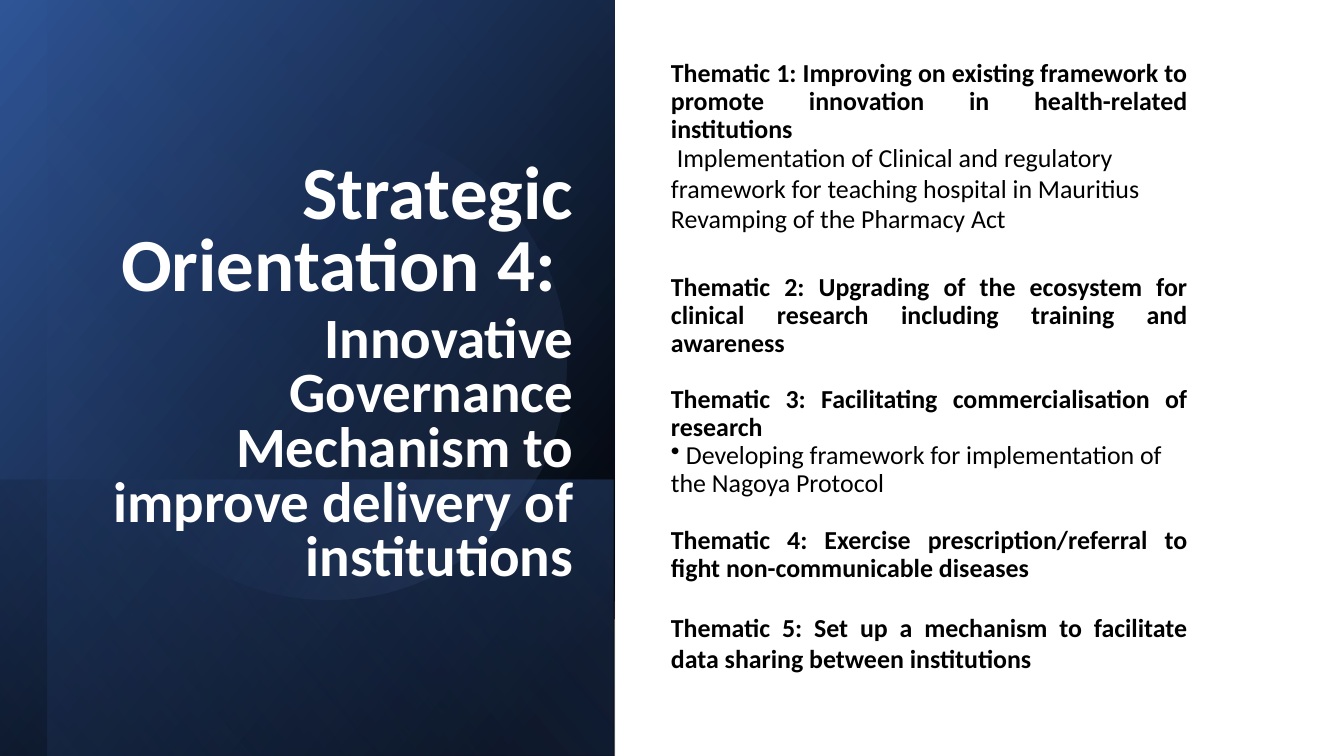
from lxml import etree
from pptx import Presentation
from pptx import util as u
from pptx.dml.color import RGBColor
from pptx.enum import shapes, text
from pptx.oxml import ns

A = ns.qn("a:p")[:-1]


def set_gradient(sp, stops, angle):
    """Fill sp with (position %, hex colour, opacity %) stops along angle in degrees."""
    sp.fill.gradient()
    grad = sp._element.spPr.find(A + "gradFill")
    grad.set("rotWithShape", "1")
    for child in list(grad):
        grad.remove(child)
    stop_list = etree.SubElement(grad, A + "gsLst")
    for pos, color, opacity in stops:
        gs = etree.SubElement(stop_list, A + "gs", pos=str(pos * 1000))
        clr = etree.SubElement(gs, A + "srgbClr", val=color)
        if opacity < 100:
            etree.SubElement(clr, A + "alpha", val=str(opacity * 1000))
    etree.SubElement(grad, A + "lin", ang=str(angle * 60000), scaled="0")


def style(p, size, color, bold, align, spacing):
    p.alignment, p.line_spacing = align, spacing
    for r in p.runs:
        r.font.name, r.font.size, r.font.bold = "Calibri", u.Pt(size), bold
        r.font.color.rgb = RGBColor.from_string(color)


prs = Presentation()
prs.slide_width, prs.slide_height = u.Cm(33.87), u.Cm(19.05)
s = prs.slides.add_slide(prs.slide_layouts[6])

# Dark panel: layered gradients
RECT, OVAL = shapes.MSO_SHAPE.RECTANGLE, shapes.MSO_SHAPE.OVAL
layers = [
    (RECT, (-1.78, 1.78, 19.05, 15.49), 90, [(8, "000000", 100), (100, "2F5597", 100)], 50),
    (RECT, (4.24, 7.82, 6.96, 15.49), 90, [(2, "4472C4", 29), (100, "000000", 30)], 130),
    (RECT, (-1.17, 2.36, 19.05, 14.3), 90, [(0, "000000", 0), (99, "4472C4", 11)], 130),
    (OVAL, (2.29, 3.12, 11.99, 11.99), 101.6, [(39, "4472C4", 0), (100, "8FAADC", 15)], 290),
]
for kind, box, rotation, stops, angle in layers:
    sp = s.shapes.add_shape(kind, *map(u.Cm, box))
    sp.rotation = rotation
    sp.shadow.inherit = False
    sp.line.fill.background()
    set_gradient(sp, stops, angle)
    if kind == RECT:
        sp._element.spPr.find(A + "xfrm").set("flipH", "1")

# Title
tf = s.shapes.add_textbox(u.Cm(1.85), u.Cm(2.9), u.Cm(12.85), u.Cm(12.04)).text_frame
tf.word_wrap = True
tf.vertical_anchor = text.MSO_ANCHOR.BOTTOM
tf.text = ("Strategic Orientation 4: \n"
           "Innovative Governance Mechanism to improve delivery of institutions")
for p, size in zip(tf.paragraphs, (53.6, 40.7)):
    style(p, size, "FFFFFF", True, text.PP_ALIGN.RIGHT, 0.8)
    p.space_after = u.Pt(6)

# Thematics: heading, detail, bulleted detail, heading line spacing
thematics = [
    ("Thematic 1: Improving on existing framework to promote innovation in "
     "health-related institutions",
     " Implementation of Clinical and regulatory framework for teaching hospital "
     "in Mauritius Revamping of the Pharmacy Act", False, 0.9),
    ("Thematic 2: Upgrading of the ecosystem for clinical research including "
     "training and awareness", None, False, 0.9),
    ("Thematic 3: Facilitating commercialisation of research",
     " Developing framework for implementation of the Nagoya Protocol", True, 0.9),
    ("Thematic 4: Exercise prescription/referral to fight non-communicable diseases",
     None, False, 0.9),
    ("Thematic 5: Set up a mechanism to facilitate data sharing between institutions",
     None, False, 1.0),
]
tf = s.shapes.add_textbox(u.Cm(16.66), u.Cm(1.38), u.Cm(13.51), u.Cm(16)).text_frame
tf.word_wrap = True
for i, (heading, detail, bulleted, spacing) in enumerate(thematics):
    p = tf.add_paragraph() if i else tf.paragraphs[0]
    p.text = heading
    style(p, 18.5, "000000", True, text.PP_ALIGN.JUSTIFY, spacing)
    p.space_before = u.Pt(20.3 if i else 0)
    if detail:
        p = tf.add_paragraph()
        p.text = detail
        style(p, 18.5, "000000", False, text.PP_ALIGN.LEFT, 0.9 if bulleted else 0.97)
        p.space_after = u.Pt(0 if bulleted else 8)
        if bulleted:
            etree.SubElement(p._p.get_or_add_pPr(), A + "buChar", char="•")

prs.save("out.pptx")
